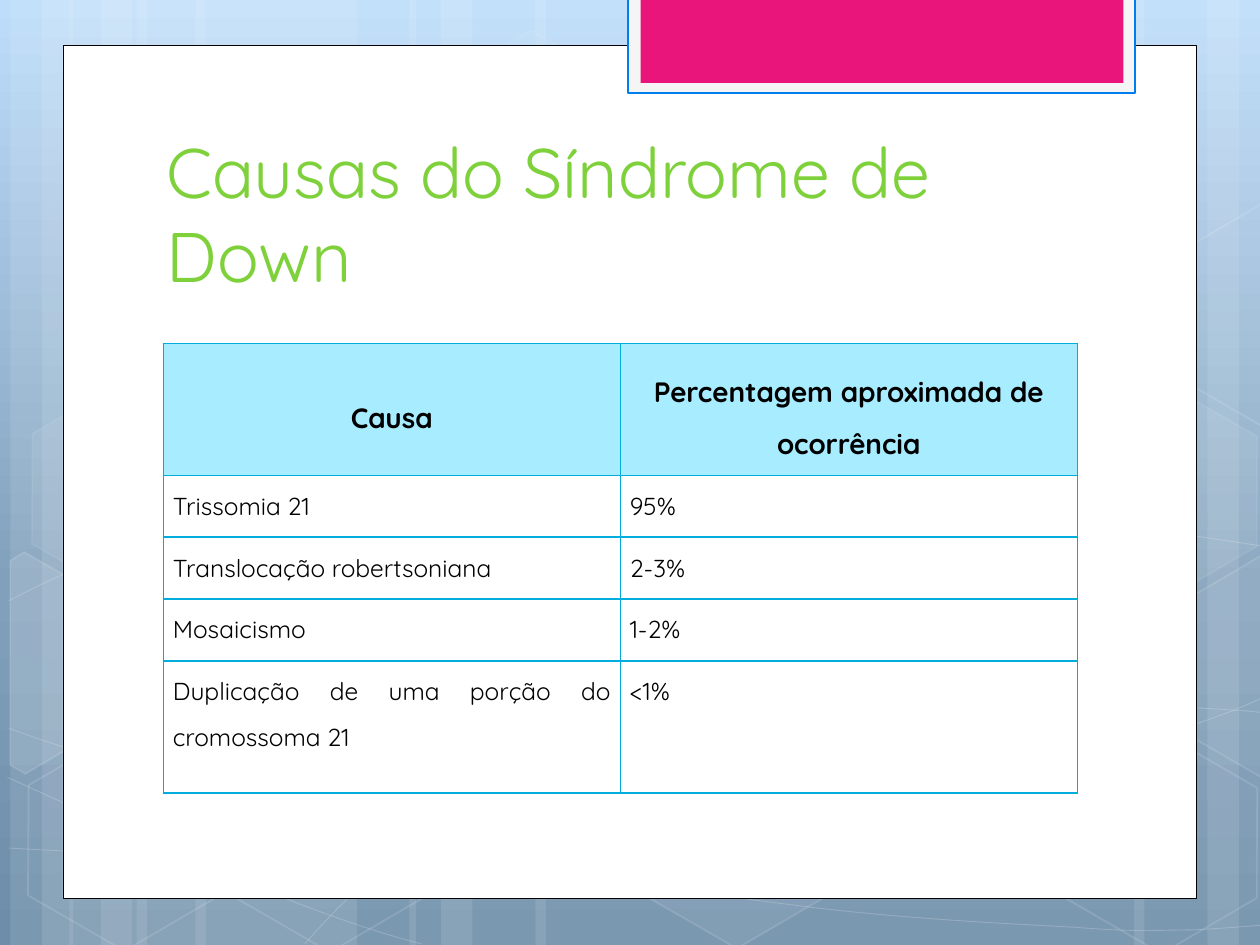
from copy import deepcopy
from dataclasses import dataclass
from math import cos, radians, sin
from typing import NamedTuple, Optional

from lxml import etree
from pptx import Presentation
from pptx.dml.color import RGBColor
from pptx.enum.shapes import MSO_SHAPE
from pptx.enum.text import MSO_ANCHOR, MSO_AUTO_SIZE, PP_ALIGN
from pptx.oxml.ns import qn
from pptx.util import Pt

RECT, HEXAGON = MSO_SHAPE.RECTANGLE, MSO_SHAPE.HEXAGON
LEFT, CENTER, JUSTIFY = PP_ALIGN.LEFT, PP_ALIGN.CENTER, PP_ALIGN.JUSTIFY
TOP, MIDDLE, BOTTOM = MSO_ANCHOR.TOP, MSO_ANCHOR.MIDDLE, MSO_ANCHOR.BOTTOM
NO_FIT = MSO_AUTO_SIZE.NONE
TILT = 30


@dataclass(frozen=True)
class Theme:
    font: str = "Quicksand"
    title_size: float = 40
    header_size: float = 16
    body_size: float = 14
    title: str = "7FD13B"
    text: str = "000000"
    white: str = "FFFFFF"
    tab: str = "F5F5F5"
    tab_line: str = "007EEB"
    accent: str = "EA157A"
    border: str = "00ADDC"
    header: str = "51DAFF"
    sky: tuple = ((0, "BDDDFA"), (0.62, "81A0BB"), (1, "6D8DA9"))


class Box(NamedTuple):
    x: float
    y: float
    w: float
    h: float


class Hexagon(NamedTuple):
    x: float
    y: float
    fill: Optional[int]
    line: int


class CutHexagon(NamedTuple):
    center: tuple
    points: list
    fill: Optional[int]


class Curve(NamedTuple):
    steps: str  # C takes three points, L takes one
    points: list


T = Theme()

# Background bars as (left, width): three shifted triples and one loose triple
BARS = [bar for x, w in ((78, 126), (111.6, 126), (306, 222))
        for bar in ((x, w), (x - 72, 36), (x - 54, 60))]
BARS += [(528, 126), (690, 36), (648, 60)]

CURVES = [
    Curve("CCCC", [
        (5, 484.6), (43.9, 486.7), (82.8, 488.9), (136.8, 488.2), (190.8, 487.4),
        (257.8, 486), (329.8, 478.8), (401.8, 471.6), (504, 457.9), (570.2, 444.2),
        (635.8, 430.6), (703.4, 409), (725, 396.7)]),
    Curve("CCCC", [
        (5, 343.4), (25.9, 332.6), (46.8, 321.8), (87.1, 310.3), (128.2, 299.5),
        (186.5, 283.7), (249.8, 278.6), (313.9, 273.6), (394.6, 272.9), (470.9, 278.6),
        (550.1, 284.4), (681.8, 306.7), (725, 312.5)]),
    Curve("C", [(4.3, 444.2), (91.4, 483.8), (177.8, 523.4), (240.5, 539.3)]),
    Curve("CCCCCC", [
        (5, 416.2), (27.4, 424.1), (50.4, 432), (92.2, 443.5), (133.9, 454.3),
        (196.6, 472.3), (257, 484.6), (316.8, 496.8), (392.4, 509.8), (452.2, 517),
        (511.9, 524.9), (576, 527.8), (614.2, 529.9), (651.6, 532.8), (661.7, 531.4),
        (680.4, 531.4), (699.1, 530.6), (712.1, 529.2), (725, 528.5)]),
    Curve("CCCCCCCLCC", [
        (174.2, 539.3), (187.2, 524.9), (200.2, 510.5), (217.4, 497.5), (234.7, 484.6),
        (259.2, 470.2), (279.4, 460.1), (299.5, 450), (311.8, 445.7), (338.4, 438.5),
        (364.3, 431.3), (412.6, 421.2), (437.8, 416.2), (463.7, 411.1), (467.3, 411.1),
        (489.6, 409.7), (511.9, 407.5), (547.2, 405.4), (571.7, 404.6), (596.9, 403.9),
        (637.9, 404.6), (637.9, 404.6), (686.2, 404.6), (699.1, 405.4), (711.4, 406.1),
        (717.8, 406.8), (724.3, 407.5), (722.2, 406.8), (724.3, 407.5)]),
]

HEXAGONS = [
    Hexagon(240.5, 25.9, 4, 8), Hexagon(357.8, 424.1, 6, 12),
    Hexagon(7.9, 425.5, None, 12), Hexagon(10.1, 224.6, 7, 8),
    Hexagon(125.3, 426.2, None, 12), Hexagon(542.2, 326.2, 10, 12),
    Hexagon(600.5, 427, None, 12), Hexagon(600.5, 226.1, 7, 8),
]

# Hexagons cut off by the slide edges
RIGHT_CUT = [(666.7, 349.2), (720.7, 317.5), (726.5, 321.1),
             (726.5, 441.4), (721.4, 444.2), (666.7, 412.6)]
CUT_HEXAGONS = [
    CutHexagon((25.9, 385.2), [(5.8, 320.4), (13.7, 315.4), (69.1, 347),
                               (68.4, 410.4), (14.4, 442.1), (5.8, 437)], 10),
    CutHexagon((709.2, 374.4), RIGHT_CUT, 4),
    CutHexagon((709.2, 173.5), [(x, y - 200.9) for x, y in RIGHT_CUT], None),
]

ROWS = [
    ("Causa", "Percentagem aproximada de ocorrência"),
    ("Trissomia 21", "95%"),
    ("Translocação robertsoniana", "2-3%"),
    ("Mosaicismo", "1-2%"),
    ("Duplicação de uma porção do cromossoma 21", "<1%"),
]
ROW_HEIGHTS = [75.2, 35.4, 35.4, 35.4, 75.4]


def rgb(color):
    return RGBColor.from_string(color)


def set_alpha(parent, percent):
    """Make the solid fill inside an element partly transparent."""
    clr = parent.find(qn("a:solidFill")).find(qn("a:srgbClr"))
    etree.SubElement(clr, qn("a:alpha")).set("val", str(percent * 1000))


def paint(sp, fill=None, alpha=100, line=None, width=1, line_alpha=100):
    sp.shadow.inherit = False
    spPr = sp._element.spPr
    if fill:
        sp.fill.solid()
        sp.fill.fore_color.rgb = rgb(fill)
        if alpha < 100:
            set_alpha(spPr, alpha)
    else:
        sp.fill.background()
    if line:
        sp.line.color.rgb = rgb(line)
        sp.line.width = Pt(width)
        if line_alpha < 100:
            set_alpha(spPr.find(qn("a:ln")), line_alpha)
    else:
        sp.line.fill.background()


def add_box(s, kind, box: Box, **style):
    sp = s.shapes.add_shape(kind, *(Pt(v) for v in box))
    paint(sp, **style)
    return sp


def add_outline(s, points, close, **style):
    emu = [(Pt(x), Pt(y)) for x, y in points]
    builder = s.shapes.build_freeform(*emu[0])
    builder.add_line_segments(emu[1:], close=close)
    sp = builder.convert_to_shape()
    paint(sp, **style)
    return sp


def add_curve(s, curve: Curve):
    """Draw the points as a line, then bend each C step into a Bézier segment."""
    sp = add_outline(s, curve.points, False, line=T.white, width=0.5, line_alpha=20)
    lines = iter(list(sp._element.iter(qn("a:lnTo"))))
    for step in curve.steps:
        first = next(lines)
        if step == "C":
            first.addprevious(etree.Element(qn("a:cubicBezTo")))
            bend = first.getprevious()
            for line in (first, next(lines), next(lines)):
                bend.append(line[0])
                line.getparent().remove(line)


def add_cut_hexagon(s, cut: CutHexagon):
    """Turn the points upright about the centre, then tilt the shape."""
    cx, cy = cut.center
    c, n = cos(radians(TILT)), sin(radians(TILT))
    upright = [(cx + (x - cx) * c + (y - cy) * n, cy - (x - cx) * n + (y - cy) * c)
               for x, y in cut.points]
    sp = add_outline(s, upright, True, fill=T.white if cut.fill else None,
                     alpha=cut.fill, line=T.white, line_alpha=12)
    sp.rotation = TILT


def write(tf, text, size, color=T.text, bold=False, align=LEFT, spacing=None):
    p = tf.paragraphs[0]
    p.alignment, p.line_spacing = align, spacing
    r = p.add_run()
    r.text = text
    r.font.name, r.font.size, r.font.bold = T.font, Pt(size), bold
    r.font.color.rgb = rgb(color)


def add_background(s):
    fill = s.background.fill
    fill.gradient()
    fill.gradient_angle = 270
    last = list(s._element.iter(qn("a:gs")))[-1]
    last.addnext(deepcopy(last))
    for stop, (position, color) in zip(fill.gradient_stops, T.sky):
        stop.position, stop.color.rgb = position, rgb(color)


def format_cell(cell, text, header):
    cell.margin_left = cell.margin_right = Pt(5.4)
    cell.margin_top = cell.margin_bottom = 0
    cell.vertical_anchor = MIDDLE if header else TOP
    tcPr = cell._tc.get_or_add_tcPr()
    for side in ("a:lnL", "a:lnR", "a:lnT", "a:lnB"):
        ln = etree.SubElement(tcPr, qn(side), w=str(Pt(1)))
        solid = etree.SubElement(ln, qn("a:solidFill"))
        etree.SubElement(solid, qn("a:srgbClr"), val=T.border)
    if header:
        cell.fill.solid()
        cell.fill.fore_color.rgb = rgb(T.header)
        set_alpha(tcPr, 50)
    else:
        cell.fill.background()
    write(cell.text_frame, text, T.header_size if header else T.body_size,
          bold=header, align=CENTER if header else JUSTIFY, spacing=1.5)


def add_causes(s, box: Box):
    table = s.shapes.add_table(len(ROWS), 2, *(Pt(v) for v in box)).table
    table.horz_banding = False
    for column in table.columns:
        column.width = Pt(box.w / 2)
    for i, (texts, height) in enumerate(zip(ROWS, ROW_HEIGHTS)):
        table.rows[i].height = Pt(height)
        for j, text in enumerate(texts):
            format_cell(table.cell(i, j), text, header=i == 0)


def main():
    prs = Presentation()
    prs.slide_width, prs.slide_height = Pt(720), Pt(540)
    s = prs.slides.add_slide(prs.slide_layouts[5])

    # Backdrop: gradient, bars, curves and hexagons
    add_background(s)
    for x, w in BARS:
        add_box(s, RECT, Box(x, 0, w, 540), fill=T.white, alpha=10)
    for curve in CURVES:
        add_curve(s, curve)
    for h in HEXAGONS:
        sp = add_box(s, HEXAGON, Box(h.x, h.y, 126, 109.4), fill=T.white if h.fill else None,
                     alpha=h.fill, line=T.white, line_alpha=h.line)
        sp.adjustments[0] = 0.285
        sp.rotation = TILT
    for cut in CUT_HEXAGONS:
        add_cut_hexagon(s, cut)

    # White page with its tab
    add_box(s, RECT, Box(36, 26, 648, 487.2), fill=T.white, line=T.text, width=0.5)
    add_box(s, RECT, Box(359, -1.4, 289.7, 54.6), fill=T.tab, line=T.tab_line, width=1.25)
    add_box(s, RECT, Box(366, -1.4, 276, 48.8), fill=T.accent)

    # Title, brought in front of the page
    title = s.shapes.title
    title.left, title.top, title.width, title.height = Pt(88), Pt(65.9), Pt(522.7), Pt(107.3)
    s.shapes._spTree.append(title._element)
    tf = title.text_frame
    tf.word_wrap, tf.auto_size, tf.vertical_anchor = True, NO_FIT, BOTTOM
    write(tf, "Causas do Síndrome de Down", T.title_size, color=T.title)

    # Causes and their frequency
    add_causes(s, Box(93.4, 196.4, 522.2, sum(ROW_HEIGHTS)))
    prs.save("out.pptx")


if __name__ == "__main__":
    main()
